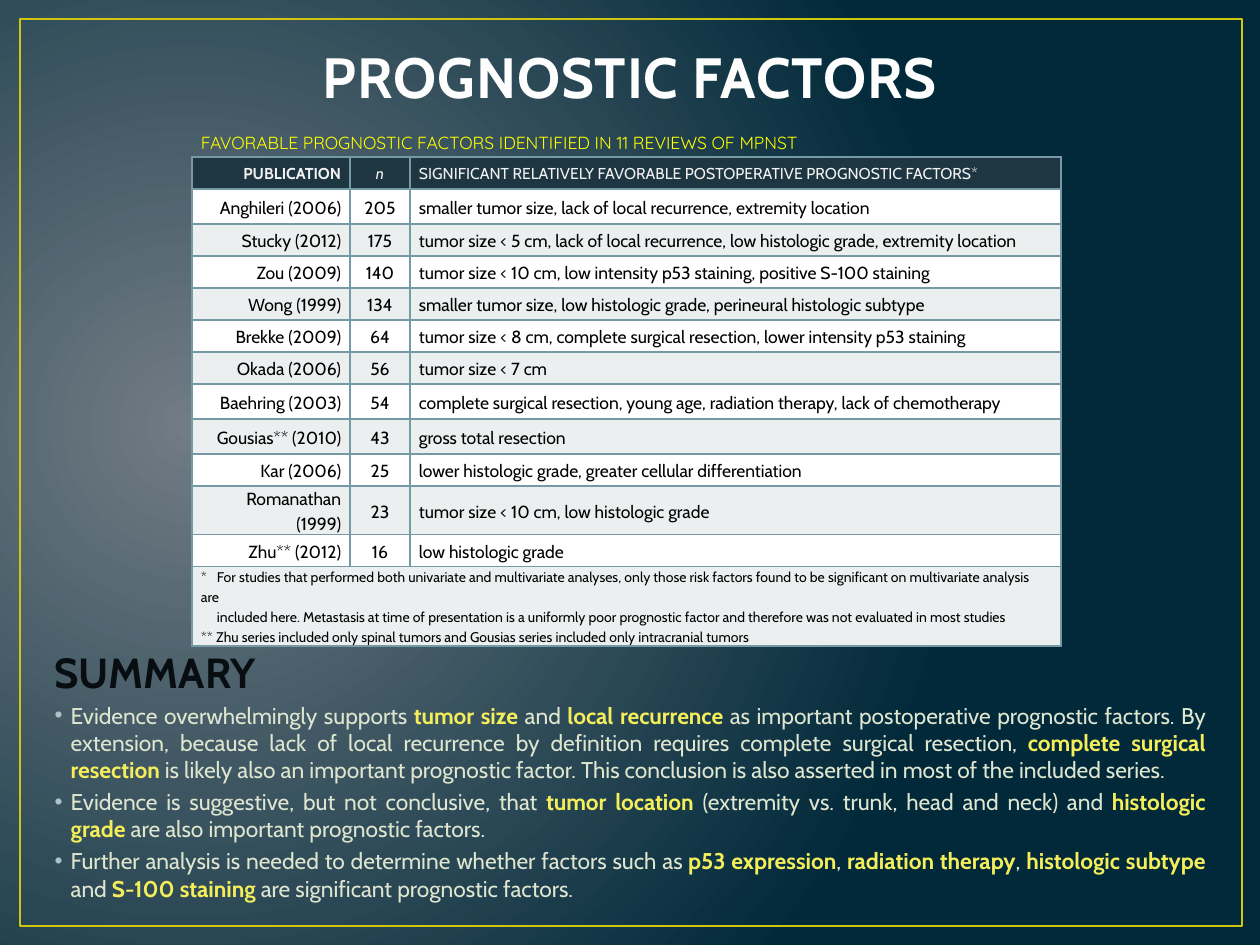
from lxml.etree import SubElement
from pptx import Presentation
from pptx.dml.color import RGBColor
from pptx.enum.shapes import MSO_SHAPE
from pptx.enum.text import MSO_ANCHOR, MSO_AUTO_SIZE, PP_ALIGN
from pptx.oxml import parse_xml
from pptx.oxml.ns import nsdecls, qn
from pptx.util import Pt

PX = 914400 / 126
HEADING_FONT, CAPTION_FONT = "Cabin", "Quicksand"
WHITE = RGBColor(0xFF, 0xFF, 0xFF)
BLACK = RGBColor(0, 0, 0)
TITLE_WHITE = RGBColor(0xFE, 0xFE, 0xFE)
TITLE_EDGE = RGBColor(0x38, 0x4F, 0x55)
FRAME_GOLD = RGBColor(0xCF, 0xC6, 0x0D)
CAPTION_YELLOW = RGBColor(0xFF, 0xFF, 0)
HEADER_FILL = RGBColor(0x1D, 0x36, 0x41)
HEADER_TEXT = RGBColor(0xF2, 0xF2, 0xF2)
BAND = RGBColor(0xEC, 0xEF, 0xF0)
BORDER = RGBColor(0x75, 0x9A, 0xA5)
SUMMARY_DARK = RGBColor(0x07, 0x0D, 0x10)
BODY_TEXT = RGBColor(0xDF, 0xE6, 0xD0)
KEY_TERM = RGBColor(0xF5, 0xEE, 0x5B)
BULLET = RGBColor(0xAC, 0xC2, 0xC9)
BG_CENTRE = RGBColor(0x71, 0x7C, 0x84)
BG_EDGE = RGBColor(0x01, 0x29, 0x3A)

CAPTION = "FAVORABLE PROGNOSTIC FACTORS IDENTIFIED IN 11 REVIEWS OF MPNST"
HEADERS = ("PUBLICATION", "n", "SIGNIFICANT RELATIVELY FAVORABLE POSTOPERATIVE PROGNOSTIC FACTORS*")
STUDIES = [
    ("Anghileri (2006)", "205", "smaller tumor size, lack of local recurrence, extremity location"),
    ("Stucky (2012)", "175",
     "tumor size < 5 cm, lack of local recurrence, low histologic grade, extremity location"),
    ("Zou (2009)", "140", "tumor size < 10 cm, low intensity p53 staining, positive S-100 staining"),
    ("Wong (1999)", "134", "smaller tumor size, low histologic grade, perineural histologic subtype"),
    ("Brekke (2009)", "64", "tumor size < 8 cm, complete surgical resection, lower intensity p53 staining"),
    ("Okada (2006)", "56", "tumor size < 7 cm"),
    ("Baehring (2003)", "54",
     "complete surgical resection, young age, radiation therapy, lack of chemotherapy"),
    ("Gousias** (2010)", "43", "gross total resection"),
    ("Kar (2006)", "25", "lower histologic grade, greater cellular differentiation"),
    ("Romanathan (1999)", "23", "tumor size < 10 cm, low histologic grade"),
    ("Zhu** (2012)", "16", "low histologic grade"),
]
FOOTNOTE = (
    "*\tFor studies that performed both univariate and multivariate analyses, only those risk factors "
    "found to be significant on multivariate analysis are",
    "included here. Metastasis at time of presentation is a uniformly poor prognostic factor and "
    "therefore was not evaluated in most studies",
    "** Zhu series included only spinal tumors and Gousias series included only intracranial tumors",
)
CONCLUSIONS = [
    "Evidence overwhelmingly supports |tumor size |and |local recurrence |as important postoperative "
    "prognostic factors. By extension, because lack of local recurrence by definition requires complete "
    "surgical resection, |complete surgical resection |is likely also an important prognostic factor. "
    "This conclusion is also asserted in most of the included series.",
    "Evidence is suggestive, but not conclusive, that |tumor location |(extremity vs. trunk, head and "
    "neck) and |histologic grade |are also important prognostic factors.",
    "Further analysis is needed to determine whether factors such as |p53 expression|, "
    "|radiation therapy|, |histologic subtype |and |S-100 staining |are significant prognostic factors.",
]
COLUMN_WIDTHS = (158, 60, 651)
ROW_HEIGHTS = (31, 32, 35, 32, 32, 32, 32, 32, 35, 35, 32, 35, 32, 67)
ALIGNMENTS = (PP_ALIGN.RIGHT, PP_ALIGN.CENTER, PP_ALIGN.LEFT)


def px(length):
    """Turn px into EMU."""
    return round(length * PX)


def assign(target, **values):
    """Set each named attribute on the target."""
    for name, value in values.items():
        setattr(target, name, value)


def add_text(paragraph, text, size, color, font=HEADING_FONT, **style):
    """Append a formatted run to a paragraph."""
    run = paragraph.add_run()
    run.text = text
    assign(run.font, size=Pt(size), name=font, **style)
    run.font.color.rgb = color
    return run


def place(shape, left, top, width, height):
    """Position a shape in px."""
    assign(shape, left=px(left), top=px(top), width=px(width), height=px(height))


def paint_background(slide):
    """Fill the slide with an off-centre radial gradient."""
    background = parse_xml(
        f'<p:bg {nsdecls("p", "a")}><p:bgPr><a:gradFill rotWithShape="1"><a:gsLst>'
        f'<a:gs pos="0"><a:srgbClr val="{BG_CENTRE}"/></a:gs>'
        f'<a:gs pos="100000"><a:srgbClr val="{BG_EDGE}"/></a:gs></a:gsLst>'
        '<a:path path="circle"><a:fillToRect l="15000" t="50000" r="85000" b="60000"/></a:path>'
        '</a:gradFill><a:effectLst/></p:bgPr></p:bg>')
    slide.element.cSld.insert(0, background)


def add_frame(slide):
    """Draw the gold frame behind everything else."""
    frame = slide.shapes.add_shape(MSO_SHAPE.RECTANGLE, px(20), px(19), px(1222), px(907))
    frame.shadow.inherit = False
    frame.fill.background()
    frame.line.color.rgb = FRAME_GOLD
    frame.line.width = Pt(1.5)
    slide.shapes.element.insert(2, frame.element)


def fill_title(title):
    """Write the outlined slide title."""
    place(title, 0, 38, 1260, 78)
    assign(title.text_frame, vertical_anchor=MSO_ANCHOR.BOTTOM, auto_size=MSO_AUTO_SIZE.NONE)
    heading = title.text_frame.paragraphs[0]
    heading.alignment = PP_ALIGN.CENTER
    run = add_text(heading, "PROGNOSTIC FACTORS", 32.4, TITLE_WHITE, bold=True)
    properties = run.font._element
    properties.set("spc", "50")
    properties.insert(0, parse_xml(
        f'<a:ln {nsdecls("a")} w="{Pt(1.05)}"><a:solidFill>'
        f'<a:srgbClr val="{TITLE_EDGE}"/></a:solidFill></a:ln>'))


def set_bullet(paragraph, indent):
    """Give a paragraph a hanging bullet, or none when indent is zero."""
    properties = paragraph._p.get_or_add_pPr()
    properties.set("marL", str(px(indent)))
    properties.set("indent", str(-px(indent)))
    if indent:
        SubElement(SubElement(properties, qn("a:buClr")), qn("a:srgbClr"), val=str(BULLET))
        SubElement(properties, qn("a:buChar"), char="•")
    else:
        SubElement(properties, qn("a:buNone"))


def fill_summary(body):
    """Write the summary heading and its conclusions."""
    place(body, 42, 640, 1176, 305)
    frame = body.text_frame
    frame.auto_size = MSO_AUTO_SIZE.NONE
    heading = frame.paragraphs[0]
    heading.alignment = PP_ALIGN.JUSTIFY
    set_bullet(heading, 0)
    add_text(heading, "SUMMARY", 24, SUMMARY_DARK, bold=True)
    for conclusion in CONCLUSIONS:
        paragraph = frame.add_paragraph()
        paragraph.alignment = PP_ALIGN.JUSTIFY
        set_bullet(paragraph, 16)
        for index, phrase in enumerate(conclusion.split("|")):
            is_key = index % 2 == 1
            add_text(paragraph, phrase, 13, KEY_TERM if is_key else BODY_TEXT, bold=is_key)


def format_cell(cell, fill, edges="LRTB"):
    """Set a cell's margins, borders and fill."""
    assign(cell, margin_left=px(9), margin_right=px(9), margin_top=0, margin_bottom=0,
           vertical_anchor=MSO_ANCHOR.MIDDLE)
    properties = cell._tc.get_or_add_tcPr()
    for side in "LRTB":
        border = SubElement(properties, qn(f"a:ln{side}"), w=str(Pt(1)))
        if side in edges:
            SubElement(SubElement(border, qn("a:solidFill")), qn("a:srgbClr"), val=str(BORDER))
        else:
            SubElement(border, qn("a:noFill"))
    if fill is None:
        cell.fill.background()
    else:
        cell.fill.solid()
        cell.fill.fore_color.rgb = fill


def write_cell(cell, text, alignment, size, color, **style):
    """Write one line of text into a cell."""
    paragraph = cell.text_frame.paragraphs[0]
    assign(paragraph, alignment=alignment, line_spacing=1.15)
    add_text(paragraph, text, size, color, **style)


def write_footnote(cell):
    """Write the table notes, with their text set in from the marks."""
    univariate, metastasis, series = FOOTNOTE
    write_cell(cell, univariate, PP_ALIGN.LEFT, 8, BLACK)
    tabs = SubElement(cell.text_frame.paragraphs[0]._p.get_or_add_pPr(), qn("a:tabLst"))
    SubElement(tabs, qn("a:tab"), pos=str(px(16)), algn="l")
    paragraph = cell.text_frame.add_paragraph()
    paragraph.line_spacing = 1.15
    paragraph._p.get_or_add_pPr().set("indent", str(px(16)))
    add_text(paragraph, metastasis, 8, BLACK)
    paragraph.add_line_break()
    add_text(paragraph, series, 8, BLACK)


def add_studies(slide):
    """Build the table of reviewed studies."""
    last = len(ROW_HEIGHTS) - 1
    table = slide.shapes.add_table(last + 1, 3, px(192), px(126), px(869), px(494)).table
    assign(table, first_row=False, horz_banding=False)
    for column, width in zip(table.columns, COLUMN_WIDTHS):
        column.width = px(width)
    for index, (row, height) in enumerate(zip(table.rows, ROW_HEIGHTS)):
        row.height = px(height)
        fill = (None, HEADER_FILL)[index] if index < 2 else (WHITE, BAND)[index % 2]
        for cell in row.cells:
            format_cell(cell, fill, "LRTB" if index else "B")
    for index in (0, last):
        table.cell(index, 0).merge(table.cell(index, 2))
    write_cell(table.cell(0, 0), CAPTION, PP_ALIGN.LEFT, 10, CAPTION_YELLOW, font=CAPTION_FONT)
    for column, (header, alignment) in enumerate(zip(HEADERS, ALIGNMENTS)):
        write_cell(table.cell(1, column), header, alignment, 9, HEADER_TEXT,
                   bold=column == 0, italic=column == 1)
    for index, study in enumerate(STUDIES, 2):
        for column, (text, alignment) in enumerate(zip(study, ALIGNMENTS)):
            write_cell(table.cell(index, column), text, alignment, 10, BLACK)
    write_footnote(table.cell(last, 0))


def main():
    """Build and save the slide."""
    deck = Presentation()
    assign(deck, slide_width=px(1260), slide_height=px(945))
    slide = deck.slides.add_slide(deck.slide_layouts[1])
    paint_background(slide)
    add_frame(slide)
    fill_title(slide.shapes.title)
    fill_summary(slide.placeholders[1])
    add_studies(slide)
    deck.save("out.pptx")


if __name__ == "__main__":
    main()
